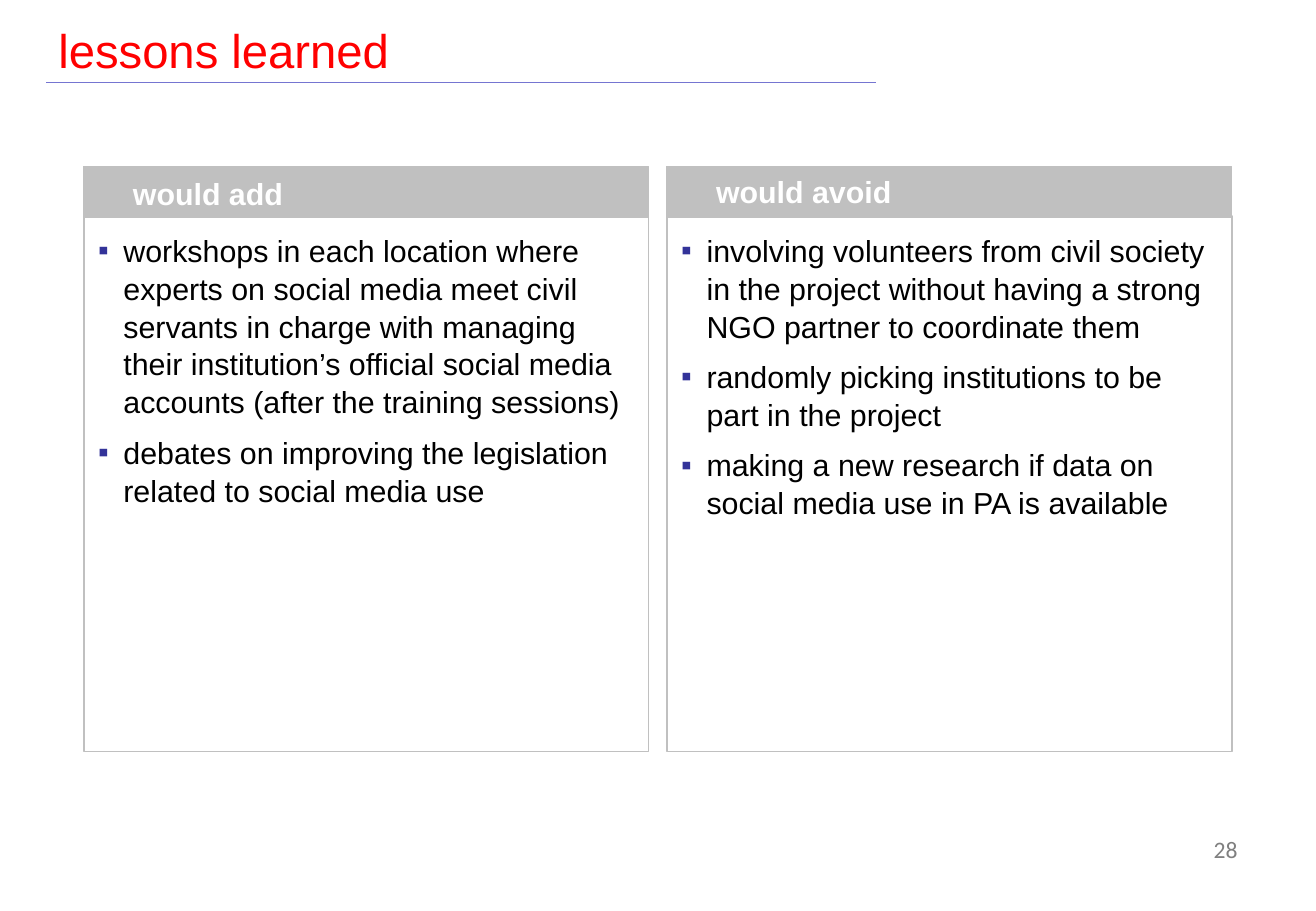
from dataclasses import dataclass

from lxml.etree import SubElement
from pptx import Presentation
from pptx.dml.color import RGBColor
from pptx.enum.shapes import MSO_CONNECTOR as Connector, MSO_SHAPE as Preset
from pptx.enum.text import MSO_ANCHOR as Anchor, PP_ALIGN as Align
from pptx.oxml.ns import qn
from pptx.shapes.autoshape import Shape
from pptx.slide import Slide
from pptx.text.text import _Paragraph as Paragraph
from pptx.util import Cm, Pt

RED = RGBColor(0xFF, 0x00, 0x00)
RULE_BLUE = RGBColor(0x75, 0x75, 0xD1)
BULLET_BLUE = RGBColor(0x33, 0x33, 0x99)
SILVER = RGBColor(0xC0, 0xC0, 0xC0)
GRAY = RGBColor(0x80, 0x80, 0x80)
WHITE = RGBColor(0xFF, 0xFF, 0xFF)
BLACK = RGBColor(0x00, 0x00, 0x00)

PANEL_LEFT, PANEL_STEP, PANEL_WIDTH = 1.75, 12.19, 11.81
HEADER_TOP, HEADER_HEIGHT = 3.48, 1.07
BODY_TOP, BODY_HEIGHT = 4.52, 11.2
HEADING_INDENT = 1.03
BULLET_INDENT = 0.53

SIDES = ("left", "top", "right", "bottom")
NO_INSETS = (0, 0, 0, 0)
TEXT_INSETS = (0.25, 0.13, 0.25, 0.13)
BODY_INSETS = (0.3, 0.3, 0.2, 0.2)


@dataclass(frozen=True)
class Box:
    left: float
    top: float
    width: float
    height: float

    def lengths(self) -> tuple[Cm, Cm, Cm, Cm]:
        return Cm(self.left), Cm(self.top), Cm(self.width), Cm(self.height)


@dataclass(frozen=True)
class TextStyle:
    size: float
    color: RGBColor
    name: str = "Arial"
    bold: bool = False


@dataclass(frozen=True)
class Panel:
    heading: str
    heading_top: float
    lessons: tuple[str, ...]


HEADING_STYLE = TextStyle(18, WHITE, bold=True)
LESSON_STYLE = TextStyle(18, BLACK)

PANELS = (
    Panel("would add", 3.53, (
        "workshops in each location where experts on social media meet civil "
        "servants in charge with managing their institution’s official social "
        "media accounts (after the training sessions)",
        "debates on improving the legislation related to social media use",
    )),
    Panel("would avoid", 3.48, (
        "involving volunteers from civil society in the project without having "
        "a strong NGO partner to coordinate them",
        "randomly picking institutions to be part in the project",
        "making a new research if data on social media use in PA is available",
    )),
)


def write(paragraph: Paragraph, text: str, style: TextStyle) -> None:
    paragraph.text = text
    font_values = {"size": Pt(style.size), "name": style.name, "bold": style.bold}
    for attribute, value in font_values.items():
        setattr(paragraph.font, attribute, value)
    paragraph.font.color.rgb = style.color


def set_frame(shape: Shape, insets: tuple[float, ...], anchor: Anchor) -> None:
    frame = shape.text_frame
    frame.word_wrap = True
    frame.vertical_anchor = anchor
    for side, inset in zip(SIDES, insets):
        setattr(frame, f"margin_{side}", Cm(inset))


def add_text(slide: Slide, box: Box, text: str, style: TextStyle,
             insets: tuple[float, ...] = TEXT_INSETS,
             anchor: Anchor = Anchor.MIDDLE, align: Align = Align.LEFT) -> None:
    text_box = slide.shapes.add_textbox(*box.lengths())
    set_frame(text_box, insets, anchor)
    paragraph = text_box.text_frame.paragraphs[0]
    paragraph.alignment = align
    write(paragraph, text, style)


def add_rectangle(slide: Slide, box: Box, line_width: float) -> Shape:
    rectangle = slide.shapes.add_shape(Preset.RECTANGLE, *box.lengths())
    rectangle.shadow.inherit = False
    rectangle.fill.background()
    rectangle.line.color.rgb = SILVER
    rectangle.line.width = Pt(line_width)
    return rectangle


def add_bullet(paragraph: Paragraph) -> None:
    properties = paragraph._p.get_or_add_pPr()
    properties.set("marL", str(Cm(BULLET_INDENT)))
    properties.set("indent", str(-Cm(BULLET_INDENT)))
    color = SubElement(properties, qn("a:buClr"))
    SubElement(color, qn("a:srgbClr"), val=str(BULLET_BLUE))
    SubElement(properties, qn("a:buFont"), typeface="Arial")
    SubElement(properties, qn("a:buChar"), char="▪")


def add_panel(slide: Slide, panel: Panel, left: float) -> None:
    header = add_rectangle(slide, Box(left, HEADER_TOP, PANEL_WIDTH, HEADER_HEIGHT), 0.75)
    header.fill.solid()
    header.fill.fore_color.rgb = SILVER
    heading_box = Box(left + HEADING_INDENT, panel.heading_top, 10.64, 1.04)
    add_text(slide, heading_box, panel.heading, HEADING_STYLE, NO_INSETS)

    body = add_rectangle(slide, Box(left, BODY_TOP, PANEL_WIDTH, BODY_HEIGHT), 1)
    set_frame(body, BODY_INSETS, Anchor.TOP)
    frame = body.text_frame
    for index, lesson in enumerate(panel.lessons):
        paragraph = frame.add_paragraph() if index else frame.paragraphs[0]
        add_bullet(paragraph)
        paragraph.alignment = Align.LEFT
        paragraph.line_spacing = 1.04
        if index:
            paragraph.space_before = Pt(7.5)
        write(paragraph, lesson, LESSON_STYLE)


def add_title_rule(slide: Slide) -> None:
    rule = slide.shapes.add_connector(
        Connector.STRAIGHT, Cm(18.31), Cm(1.73), Cm(0.97), Cm(1.73))
    rule.line.color.rgb = RULE_BLUE
    rule.line.width = Pt(0.75)
    SubElement(rule._element.spPr, qn("a:effectLst"))


def main() -> None:
    presentation = Presentation()
    presentation.slide_width = Cm(27.51)
    presentation.slide_height = Cm(19.05)
    slide = presentation.slides.add_slide(presentation.slide_layouts[6])

    add_title_rule(slide)
    add_text(slide, Box(0.97, 0.33, 17.32, 1.4), "lessons learned", TextStyle(28, RED))
    for index, panel in enumerate(PANELS):
        add_panel(slide, panel, PANEL_LEFT + index * PANEL_STEP)
    add_text(slide, Box(24.16, 17.32, 1.96, 1.4), "28", TextStyle(14, GRAY, "Calibri"),
             anchor=Anchor.TOP, align=Align.RIGHT)

    presentation.save("out.pptx")


if __name__ == "__main__":
    main()
